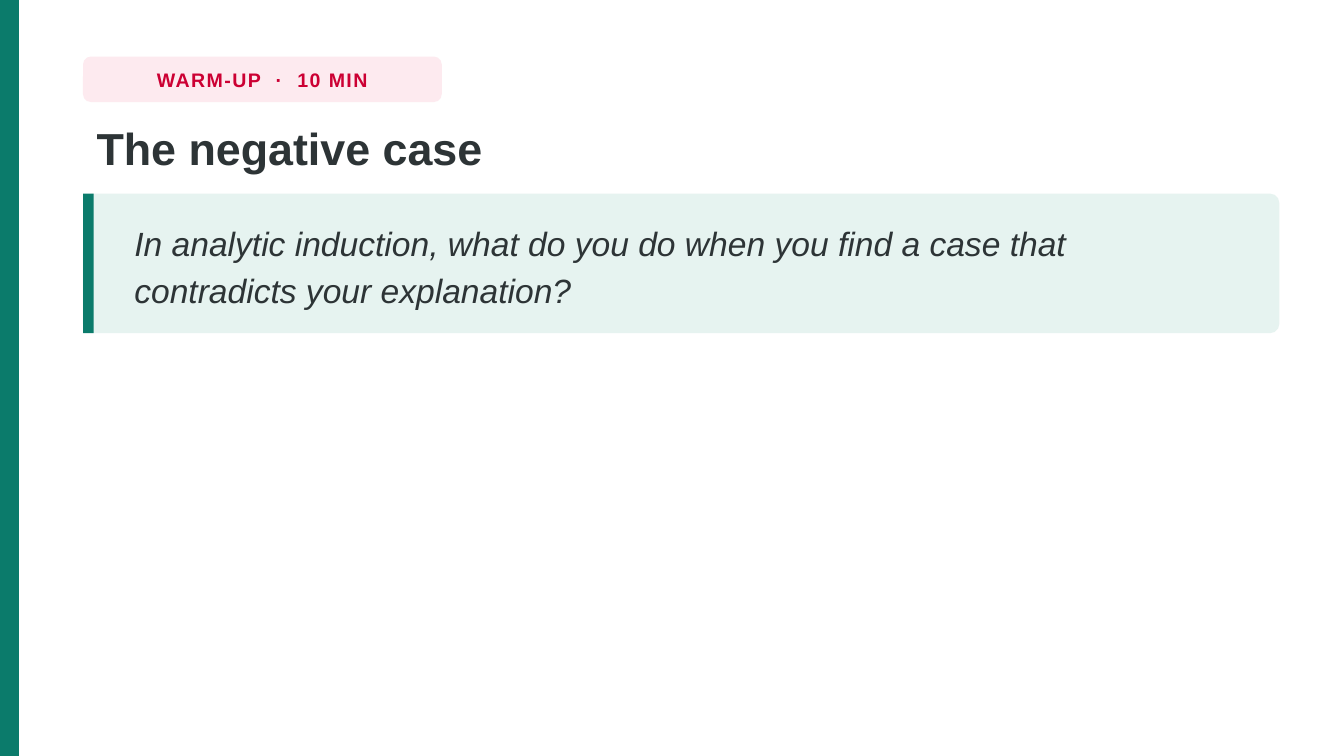
from dataclasses import dataclass

from pptx import Presentation
from pptx.dml.color import RGBColor
from pptx.enum import shapes, text
from pptx.util import Cm, Pt


@dataclass(frozen=True)
class Theme:
    font: str = "Arial"
    teal: str = "0B7B6B"
    mint: str = "E6F3F0"
    rose: str = "FDEAEF"
    red: str = "CC0033"
    ink: str = "2D3436"
    white: str = "FFFFFF"
    tag: float = 10.5
    title: float = 24
    body: float = 18


@dataclass(frozen=True)
class Box:
    left: float
    top: float
    width: float
    height: float

    def place(self) -> tuple:
        return Cm(self.left), Cm(self.top), Cm(self.width), Cm(self.height)


@dataclass(frozen=True)
class Panel:
    box: Box
    fill: str
    radius: float = 0


THEME = Theme()
WIDTH, HEIGHT = 25.4, 14.29
LEFT, SPAN = 1.57, 22.61
TOP, DEPTH = 3.66, 2.64

TAG = Box(LEFT, 1.07, 6.78, 0.86)
TITLE = Box(LEFT, 2.13, SPAN, 1.42)
QUERY = Box(2.29, TOP + 0.12, 21.21, DEPTH - 0.24)

PANELS = [
    Panel(Box(0, 0, 0.36, HEIGHT), THEME.teal),
    Panel(TAG, THEME.rose, 0.15),
    Panel(Box(LEFT, TOP, SPAN, DEPTH), THEME.mint, 0.18),
    Panel(Box(LEFT, TOP, 0.2, DEPTH), THEME.teal),
]


def draw(slide, panel: Panel) -> None:
    kind = shapes.MSO_SHAPE
    form = kind.ROUNDED_RECTANGLE if panel.radius else kind.RECTANGLE
    shape = slide.shapes.add_shape(form, *panel.box.place())
    if panel.radius:
        shape.adjustments[0] = panel.radius / panel.box.height
    shape.shadow.inherit = False
    shape.fill.solid()
    shape.fill.fore_color.rgb = RGBColor.from_string(panel.fill)
    shape.line.fill.background()


def write(shape, words: str, *, size: float, color: str = THEME.ink,
          bold: bool = False, italic: bool = False, wrap: bool = True,
          align=text.PP_ALIGN.LEFT, anchor=text.MSO_ANCHOR.MIDDLE,
          leading: float = 1.0, tracking: float = 0) -> None:
    frame = shape.text_frame
    frame.auto_size = text.MSO_AUTO_SIZE.NONE
    frame.word_wrap = wrap
    frame.vertical_anchor = anchor
    para = frame.paragraphs[0]
    para.alignment = align
    para.line_spacing = leading
    para.space_before = Pt(0)
    run = para.add_run()
    run.text = words
    font = run.font
    font.name, font.size = THEME.font, Pt(size)
    font.bold, font.italic = bold, italic
    font.color.rgb = RGBColor.from_string(color)
    if tracking:
        run._r.get_or_add_rPr().set("spc", str(round(tracking * 100)))


def main() -> None:
    deck = Presentation()
    deck.slide_width, deck.slide_height = Cm(WIDTH), Cm(HEIGHT)
    slide = deck.slides.add_slide(deck.slide_layouts[5])
    slide.background.fill.solid()
    slide.background.fill.fore_color.rgb = RGBColor.from_string(THEME.white)

    for panel in PANELS:
        draw(slide, panel)

    title = slide.shapes.title
    title.left, title.top, title.width, title.height = TITLE.place()
    write(title, "The negative case", size=THEME.title, bold=True,
          anchor=text.MSO_ANCHOR.TOP, leading=1.02)

    write(slide.shapes.add_textbox(*TAG.place()), "WARM-UP  ·  10 MIN",
          size=THEME.tag, color=THEME.red, bold=True, wrap=False,
          align=text.PP_ALIGN.CENTER, tracking=0.8)

    write(slide.shapes.add_textbox(*QUERY.place()),
          "In analytic induction, what do you do when you find a case "
          "that contradicts your explanation?",
          size=THEME.body, italic=True, leading=1.16)

    deck.save("out.pptx")


if __name__ == "__main__":
    main()
